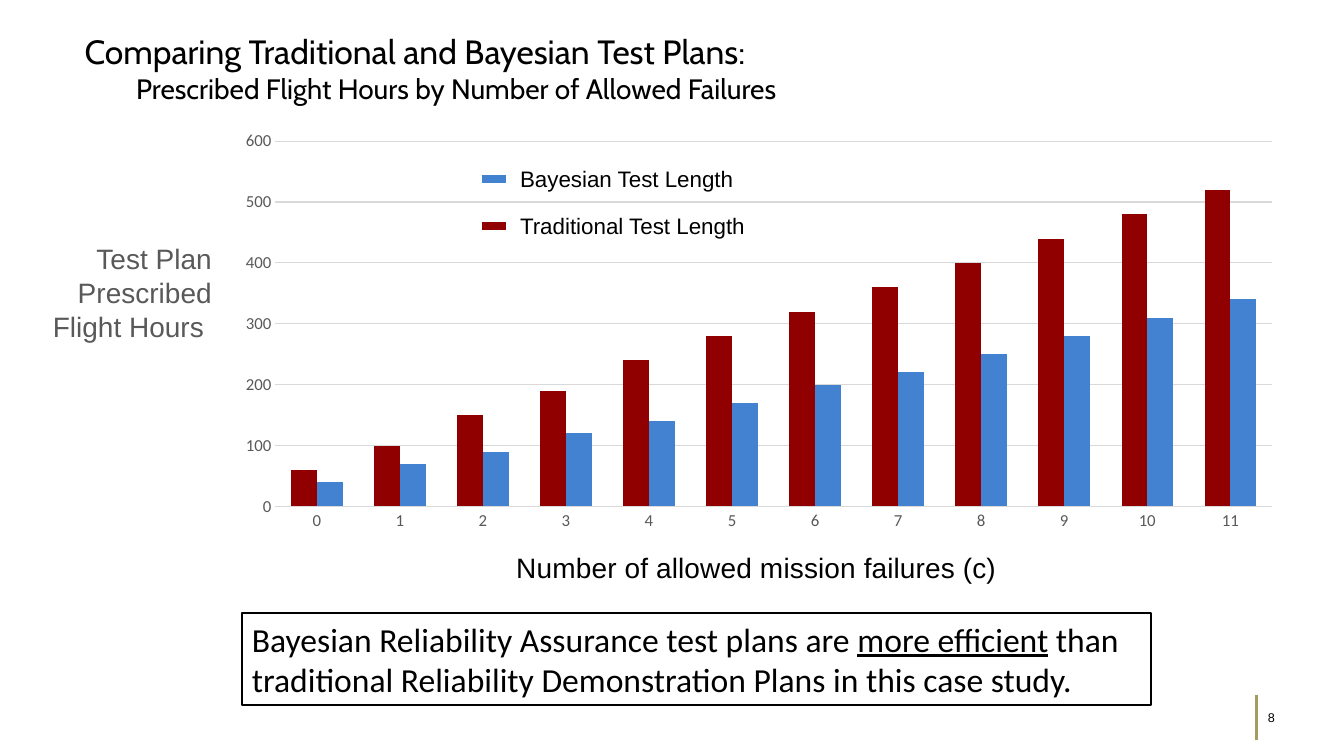
from dataclasses import dataclass
from typing import Any

from lxml import etree
from pptx import Presentation
from pptx.chart.data import CategoryChartData
from pptx.dml.color import RGBColor
from pptx.enum.chart import XL_CHART_TYPE, XL_TICK_MARK
from pptx.enum.shapes import MSO_CONNECTOR, MSO_SHAPE
from pptx.enum.text import MSO_ANCHOR, MSO_AUTO_SIZE, PP_ALIGN
from pptx.oxml.ns import qn
from pptx.util import Pt

CLUSTERED = XL_CHART_TYPE.COLUMN_CLUSTERED
NO_TICK = XL_TICK_MARK.NONE
STRAIGHT = MSO_CONNECTOR.STRAIGHT
RECTANGLE = MSO_SHAPE.RECTANGLE
TOP, MIDDLE = MSO_ANCHOR.TOP, MSO_ANCHOR.MIDDLE
FIXED_SIZE = MSO_AUTO_SIZE.NONE
LEFT, RIGHT = PP_ALIGN.LEFT, PP_ALIGN.RIGHT


@dataclass(frozen=True)
class Theme:
    black: RGBColor = RGBColor(0x00, 0x00, 0x00)
    grey: RGBColor = RGBColor(0x59, 0x59, 0x59)
    grid: RGBColor = RGBColor(0xD9, 0xD9, 0xD9)
    red: RGBColor = RGBColor(0x90, 0x00, 0x01)
    blue: RGBColor = RGBColor(0x42, 0x82, 0xD1)
    gold: RGBColor = RGBColor(0xA5, 0x9A, 0x60)
    heading_font: str = "Cabin"
    label_font: str = "Arial"
    body_font: str = "Calibri"
    large: float = 24
    medium: float = 20
    legend: float = 16
    tick: float = 12
    page: float = 9


THEME = Theme()


@dataclass(frozen=True)
class Box:
    left: float
    top: float
    width: float
    height: float

    def lengths(self) -> tuple[Pt, Pt, Pt, Pt]:
        return Pt(self.left), Pt(self.top), Pt(self.width), Pt(self.height)


@dataclass(frozen=True)
class Run:
    text: str
    size: float
    underline: bool = False


@dataclass(frozen=True)
class TestPlan:
    name: str
    color: RGBColor
    hours: tuple[int, ...]


TRADITIONAL = TestPlan("Traditional Test Length", THEME.red,
                       (60, 100, 150, 190, 240, 280, 320, 360, 400, 440, 480, 520))
BAYESIAN = TestPlan("Bayesian Test Length", THEME.blue,
                    (40, 70, 90, 120, 140, 170, 200, 220, 250, 280, 310, 340))
BAR_ORDER = (TRADITIONAL, BAYESIAN)
LEGEND_ORDER = (BAYESIAN, TRADITIONAL)

CHART_BOX = Box(158.4, 87.1, 765.4, 343.4)
LEGEND_LEFT, LEGEND_TOP, LEGEND_PITCH = 344.2, 114.5, 33.5
KEY_WIDTH, KEY_DROP, LABEL_OFFSET = 17.3, 13.5, 20.2


def write_text(shape: Any, paragraphs: list[list[Run]], *, font: str,
               color: RGBColor = THEME.black, align: Any = LEFT,
               anchor: Any = TOP, later_indent: float = 0) -> None:
    frame = shape.text_frame
    frame.word_wrap = True
    frame.auto_size = FIXED_SIZE
    frame.vertical_anchor = anchor
    for index, runs in enumerate(paragraphs):
        paragraph = frame.paragraphs[0] if index == 0 else frame.add_paragraph()
        paragraph.alignment = align
        if index and later_indent:
            paragraph._p.get_or_add_pPr().set("marL", str(Pt(later_indent)))
        for part in runs:
            run = paragraph.add_run()
            run.text = part.text
            run.font.size = Pt(part.size)
            run.font.name = font
            run.font.color.rgb = color
            if part.underline:
                run.font.underline = True


def add_label(slide: Any, box: Box, lines: list[str], size: float, **style: Any) -> None:
    label = slide.shapes.add_textbox(*box.lengths())
    write_text(label, [[Run(line, size)] for line in lines],
               font=THEME.label_font, **style)


def add_line(slide: Any, start: tuple[float, float], end: tuple[float, float],
             color: RGBColor, weight: float) -> None:
    line = slide.shapes.add_connector(STRAIGHT, *(Pt(n) for n in start + end))
    line.line.color.rgb = color
    line.line.width = Pt(weight)
    etree.SubElement(line._element.spPr, qn("a:effectLst"))


def set_layout(parent: Any, **settings: Any) -> None:
    layout = parent.find(qn("c:layout"))
    if layout is None:
        layout = etree.Element(qn("c:layout"))
        parent.insert(0, layout)
    manual = etree.SubElement(layout, qn("c:manualLayout"))
    for tag, value in settings.items():
        etree.SubElement(manual, qn(f"c:{tag}")).set("val", str(value))


def add_hours_chart(slide: Any) -> None:
    data = CategoryChartData()
    data.categories = [str(failures) for failures in range(len(BAYESIAN.hours))]
    for plan in BAR_ORDER:
        data.add_series(plan.name, plan.hours)
    chart = slide.shapes.add_chart(CLUSTERED, *CHART_BOX.lengths(), data).chart
    chart.has_legend = False
    chart.has_title = False
    chart.font.name = THEME.body_font
    chart.font.size = Pt(THEME.tick)
    chart.font.color.rgb = THEME.grey

    bars = chart.plots[0]
    bars.vary_by_categories = False
    bars.gap_width = 123
    bars.overlap = 0
    for series, plan in zip(bars.series, BAR_ORDER):
        series.format.fill.solid()
        series.format.fill.fore_color.rgb = plan.color

    failures_axis, hours_axis = chart.category_axis, chart.value_axis
    for axis in (failures_axis, hours_axis):
        axis.major_tick_mark = NO_TICK
        axis.minor_tick_mark = NO_TICK
    hours_axis.minimum_scale = 0
    hours_axis.maximum_scale = 600
    hours_axis.major_unit = 100
    hours_axis.format.line.fill.background()
    for rule in (failures_axis.format.line, hours_axis.major_gridlines.format.line):
        rule.color.rgb = THEME.grid
        rule.width = Pt(0.75)

    axis_title = failures_axis.axis_title
    caption = axis_title.text_frame.paragraphs[0].add_run()
    caption.text = "Number of allowed mission failures (c)"
    caption.font.name = THEME.label_font
    caption.font.size = Pt(THEME.medium)
    caption.font.bold = False
    caption.font.color.rgb = THEME.black

    set_layout(axis_title._element, xMode="edge", yMode="edge", x=0.27, y=0.88)
    plot_area = chart._chartSpace.find(f".//{qn('c:plotArea')}")
    set_layout(plot_area, layoutTarget="inner", xMode="edge", yMode="edge",
               x=0.05, y=0.04, w=0.93, h=0.76)


def add_legend(slide: Any) -> None:
    for row, plan in enumerate(LEGEND_ORDER):
        top = LEGEND_TOP + row * LEGEND_PITCH
        key_y = top + KEY_DROP
        add_line(slide, (LEGEND_LEFT, key_y), (LEGEND_LEFT + KEY_WIDTH, key_y),
                 plan.color, 6)
        add_label(slide, Box(LEGEND_LEFT + LABEL_OFFSET, top, 180, 26.6),
                  [plan.name], THEME.legend)


def add_conclusion(slide: Any) -> None:
    conclusion = slide.shapes.add_shape(RECTANGLE, *Box(172.8, 437.8, 649.4, 65.5).lengths())
    conclusion.shadow.inherit = False
    conclusion.fill.background()
    conclusion.line.color.rgb = THEME.black
    conclusion.line.width = Pt(1.5)
    write_text(conclusion, [[
        Run("Bayesian Reliability Assurance test plans are ", THEME.large),
        Run("more efficient", THEME.large, underline=True),
        Run(" than traditional Reliability Demonstration Plans in this case study.",
            THEME.large),
    ]], font=THEME.body_font, anchor=MIDDLE)


def main() -> None:
    deck = Presentation()
    deck.slide_width, deck.slide_height = Pt(960), Pt(540)
    slide = deck.slides.add_slide(deck.slide_layouts[5])

    heading = slide.shapes.title
    heading.left, heading.top, heading.width, heading.height = Box(53.3, 18.7, 888.5, 60.5).lengths()
    write_text(heading, [
        [Run("Comparing Traditional and Bayesian Test Plans:", THEME.large)],
        [Run("Prescribed Flight Hours by Number of Allowed Failures", THEME.medium)],
    ], font=THEME.heading_font, later_indent=36.7)

    add_hours_chart(slide)
    add_legend(slide)
    add_label(slide, Box(29.5, 169.2, 128.9, 79.9), ["Test Plan Prescribed", "Flight Hours "],
              THEME.medium, color=THEME.grey, align=RIGHT)
    add_conclusion(slide)
    add_line(slide, (897.8, 496.1), (897.8, 528.5), THEME.gold, 2)
    add_label(slide, Box(898.6, 502.6, 37.4, 19.4), ["8"], THEME.page, anchor=MIDDLE)
    deck.save("out.pptx")


if __name__ == "__main__":
    main()
